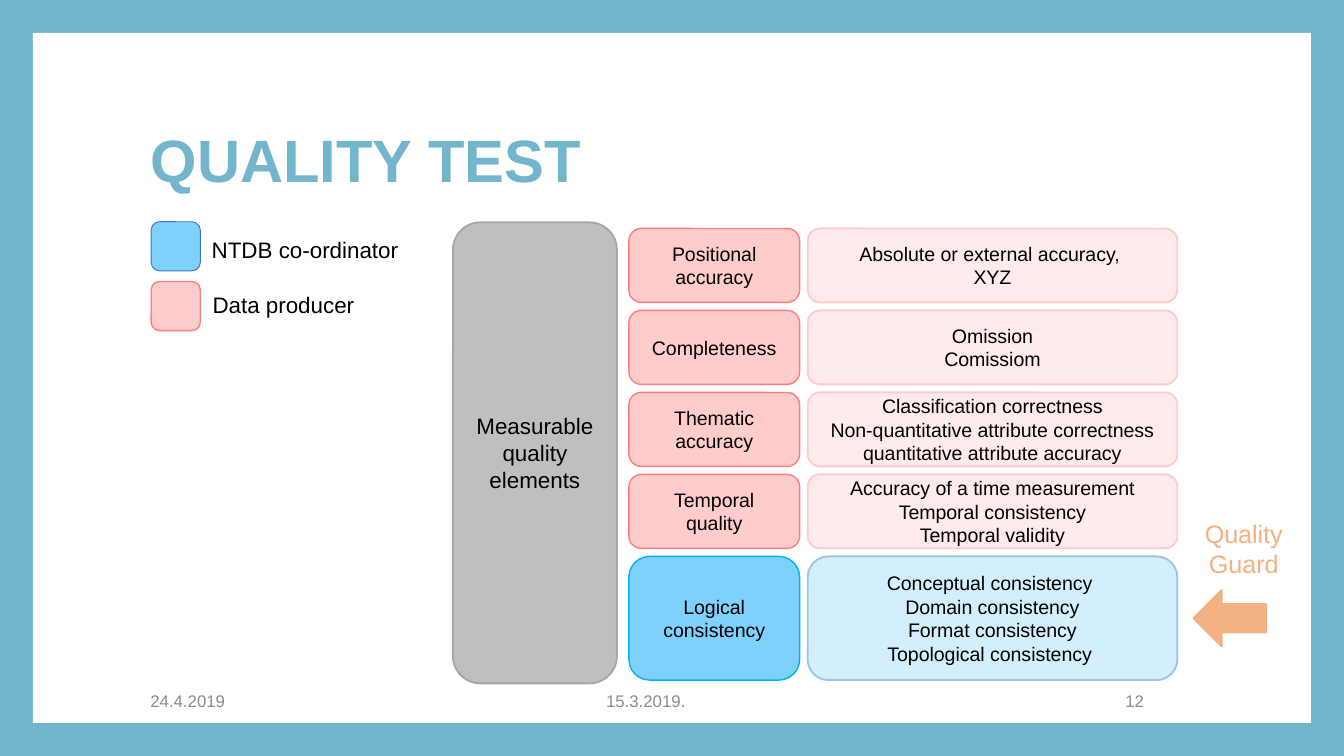
import pptx
import pptx.util
import pptx.dml.color
import pptx.enum.shapes
import pptx.enum.text

KIND = pptx.enum.shapes.MSO_SHAPE
ALIGN = pptx.enum.text.PP_ALIGN
ANCHOR = pptx.enum.text.MSO_ANCHOR
FIT = pptx.enum.text.MSO_AUTO_SIZE

CELL = 0.1
BLUE, PINK, TEAL, PEACH, GREY = "7ED1FA", "FFCCCC", "72B5CC", "F4B183", "8C8C8C"
ROSE = "FF7C80"


def paint(color, code):
    color.rgb = pptx.dml.color.RGBColor.from_string(code)


def write(frame, text, size=10.5, color="000000", bold=False,
          align=ALIGN.CENTER, anchor=ANCHOR.MIDDLE, wrap=True, space=None):
    frame.text = text
    frame.word_wrap = wrap
    frame.vertical_anchor = anchor
    for line in frame.paragraphs:
        line.alignment = align
        line.line_spacing = space
        for run in line.runs:
            run.font.name = "Arial"
            run.font.size = pptx.util.Pt(size)
            run.font.bold = bold
            paint(run.font.color, color)


class Page:
    def __init__(self, deck, back):
        self.slide = deck.slides.add_slide(deck.slide_layouts[5])
        fill = self.slide.background.fill
        fill.solid()
        paint(fill.fore_color, back)

    def place(self, *cells):
        return [pptx.util.Inches(cell * CELL) for cell in cells]

    def box(self, col, row, wide, high, fill, line=None, text="",
            kind=KIND.ROUNDED_RECTANGLE, width=1, turn=0, **style):
        shape = self.slide.shapes.add_shape(kind, *self.place(col, row, wide, high))
        shape.shadow.inherit = False
        shape.rotation = turn
        shape.fill.solid()
        paint(shape.fill.fore_color, fill)
        if line:
            paint(shape.line.color, line)
            shape.line.width = pptx.util.Pt(width)
        else:
            shape.line.fill.background()
        if text:
            write(shape.text_frame, text, **style)

    def label(self, col, row, wide, high, text, grow=False, **style):
        frame = self.slide.shapes.add_textbox(*self.place(col, row, wide, high)).text_frame
        write(frame, text, **style)
        if grow:
            frame.auto_size = FIT.SHAPE_TO_FIT_TEXT

    def title(self, col, row, wide, high, text, **style):
        shape = self.slide.shapes.title
        shape.left, shape.top, shape.width, shape.height = self.place(col, row, wide, high)
        write(shape.text_frame, text, **style)
        self.slide.shapes._spTree.append(shape._element)


def main():
    deck = pptx.Presentation()
    deck.slide_width = pptx.util.Inches(10)
    deck.slide_height = deck.slide_width * 9 // 16
    page = Page(deck, TEAL)

    page.box(2.45, 2.45, 95.1, 51.35, "FFFFFF", kind=KIND.RECTANGLE)
    page.title(10.2, 6.7, 82.9, 10.9, "QUALITY TEST", size=32, color=TEAL,
               bold=True, align=ALIGN.LEFT, space=0.9)

    for col, wide, text, align in [
        (10.2, 22.5, "24.4.2019", ALIGN.LEFT),
        (34.4, 27.3, "15.3.2019.", ALIGN.CENTER),
        (63.6, 22.5, "12", ALIGN.RIGHT),
    ]:
        page.label(col, 50.65, wide, 3, text, size=9, color=GREY, align=align)

    page.box(11.25, 16.5, 3.65, 3.65, BLUE, "4472C4", width=0.5)
    page.box(11.25, 20.95, 3.65, 3.65, PINK, ROSE, width=0.75)
    for col, row, wide, text in [
        (14.7, 17.1, 16, "NTDB co-ordinator"),
        (14.8, 21.2, 12.6, "Data producer"),
    ]:
        page.label(col, row, wide, 3, text, grow=True, size=12,
                   wrap=False, anchor=ANCHOR.TOP)

    page.box(33.7, 16.55, 12.2, 34.3, "BFBFBF", "A6A6A6",
             "Measurable quality elements", size=12)

    warm = (PINK, ROSE, "FFEBEB", PINK)
    cool = (BLUE, "00B0F0", "D3EFFD", "9DC3E6")
    tests = [
        ("Positional accuracy", "Absolute or external accuracy, \nXYZ", 5.5, warm),
        ("Completeness", "Omission\nComissiom", 5.5, warm),
        ("Thematic accuracy", "Classification correctness\n"
         "Non-quantitative attribute correctness\n"
         "quantitative attribute accuracy", 5.5, warm),
        ("Temporal quality", "Accuracy of a time measurement\n"
         "Temporal consistency\nTemporal validity", 5.5, warm),
        ("Logical consistency", "Conceptual consistency \nDomain consistency\n"
         "Format consistency\nTopological consistency ", 9.2, cool),
    ]
    for step, (name, parts, high, (fill, line, pale, edge)) in enumerate(tests):
        row = 17 + 6.1 * step
        page.box(46.8, row, 12.7, high, fill, line, name, width=0.75)
        page.box(60.1, row, 27.5, high, pale, edge, parts)

    page.box(88.8, 43.9, 5.4, 4.2, PEACH, PEACH, kind=KIND.RIGHT_ARROW, turn=180)
    page.label(88.4, 38.05, 8.3, 5.6, "Quality\vGuard", grow=True, size=13.5,
               color=PEACH, anchor=ANCHOR.TOP)

    deck.save("out.pptx")


if __name__ == "__main__":
    main()
